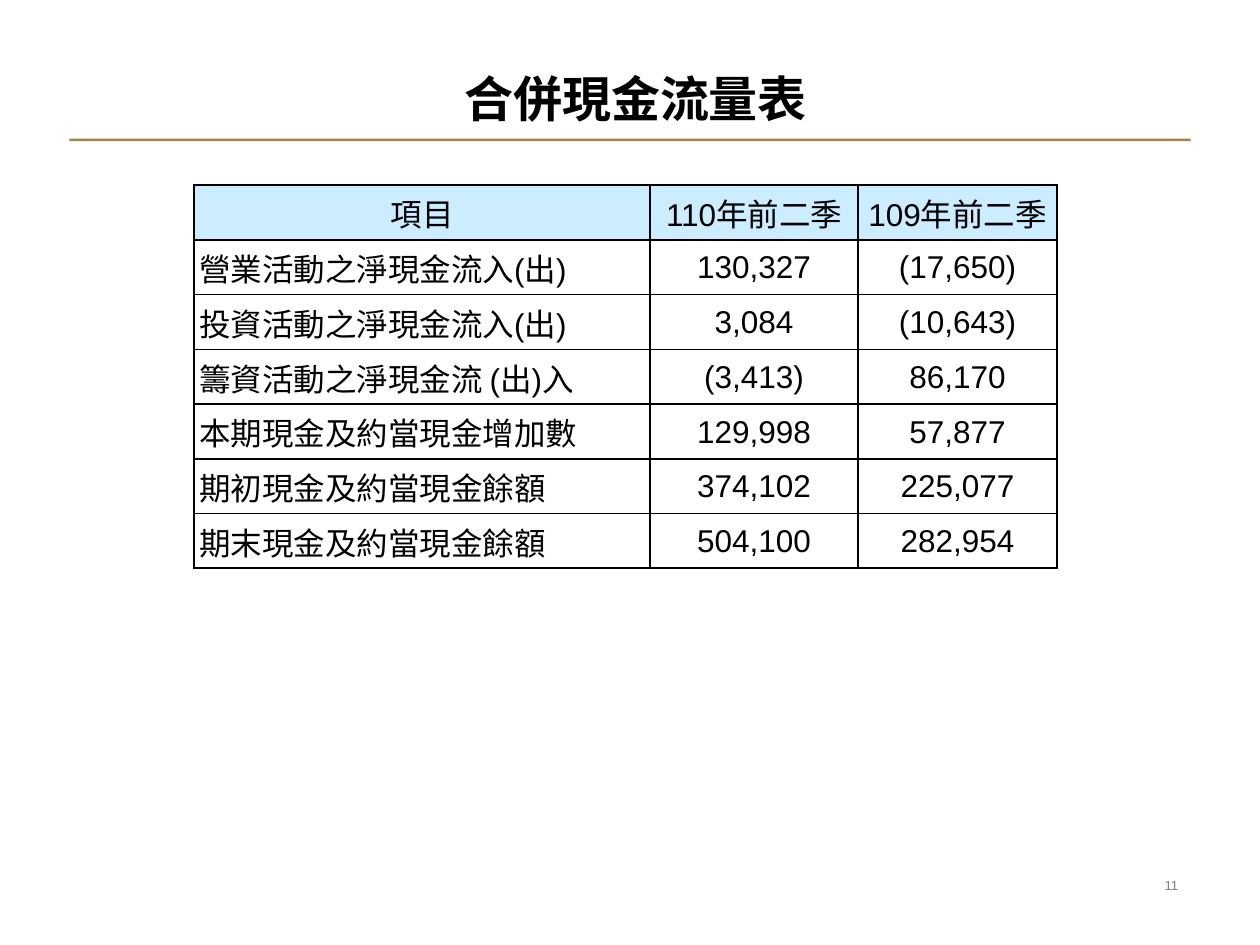
from lxml import etree
from pptx import Presentation
from pptx.dml.color import RGBColor
from pptx.enum.shapes import MSO_SHAPE
from pptx.enum.text import MSO_ANCHOR, PP_ALIGN
from pptx.oxml.ns import qn
from pptx.util import Inches, Pt

LEFT, CENTER, RIGHT = PP_ALIGN.LEFT, PP_ALIGN.CENTER, PP_ALIGN.RIGHT
MIDDLE, BOTTOM = MSO_ANCHOR.MIDDLE, MSO_ANCHOR.BOTTOM
RECTANGLE = MSO_SHAPE.RECTANGLE

CASH_FLOWS = [
    ("項目", "110年前二季", "109年前二季"),
    ("營業活動之淨現金流入(出)", "130,327", "(17,650)"),
    ("投資活動之淨現金流入(出)", "3,084", "(10,643)"),
    ("籌資活動之淨現金流 (出)入", "(3,413)", "86,170"),
    ("本期現金及約當現金增加數", "129,998", "57,877"),
    ("期初現金及約當現金餘額", "374,102", "225,077"),
    ("期末現金及約當現金餘額", "504,100", "282,954"),
]


def rgb(value):
    """Turn a hex string into a colour."""
    return RGBColor.from_string(value)


class Deck:
    """Hold the style and the current slide."""

    font, cjk_font = "Arial", "Noto Sans CJK SC"
    black, white, gold, gray, header = "000000", "FFFFFF", "A78343", "808080", "CCECFF"

    def __init__(self, prs):
        """Start a title-only slide."""
        self.s = prs.slides.add_slide(prs.slide_layouts[5])

    def set_text(self, tf, text, size, color, align, font=None, bold=False):
        """Put one formatted paragraph in a text frame."""
        p = tf.paragraphs[0]
        p.text = text
        p.alignment = align
        p.font.size = Pt(size)
        p.font.bold = bold
        p.font.color.rgb = rgb(color)
        p.font.name = font or self.font
        defaults = p._p.pPr.find(qn("a:defRPr"))
        etree.SubElement(defaults, qn("a:ea"), typeface=self.cjk_font)
        return p

    def title(self, text, left, top, width, height):
        """Place and format the title."""
        sp = self.s.shapes.title
        sp.left, sp.top, sp.width, sp.height = map(Inches, (left, top, width, height))
        tf = sp.text_frame
        tf.vertical_anchor = BOTTOM
        tf.margin_top = tf.margin_bottom = Inches(0.02)
        p = self.set_text(tf, text, 28, self.black, CENTER, self.cjk_font, True)
        p.line_spacing = 0.9

    def rule(self, left, top, width, height):
        """Draw the gold rule under the title."""
        sp = self.s.shapes.add_shape(RECTANGLE, *map(Inches, (left, top, width, height)))
        sp.shadow.inherit = False
        sp.fill.solid()
        sp.fill.fore_color.rgb = rgb(self.gold)
        sp.line.fill.background()

    def page_number(self, text, left, top, width, height):
        """Add the page number."""
        sp = self.s.shapes.add_textbox(*map(Inches, (left, top, width, height)))
        tf = sp.text_frame
        tf.word_wrap = True
        tf.vertical_anchor = MIDDLE
        self.set_text(tf, text, 7.5, self.gray, RIGHT)

    def border(self, cell):
        """Outline a cell with thin black lines."""
        tcPr = cell._tc.get_or_add_tcPr()
        for i, side in enumerate(("lnL", "lnR", "lnT", "lnB")):
            ln = etree.Element(qn(f"a:{side}"), w=str(Pt(1)))
            fill = etree.SubElement(ln, qn("a:solidFill"))
            etree.SubElement(fill, qn("a:srgbClr"), val=self.black)
            tcPr.insert(i, ln)

    def table(self, rows, left, top, col_widths, row_height):
        """Add a bordered table with a tinted header row."""
        frame = self.s.shapes.add_table(
            len(rows), len(col_widths), Inches(left), Inches(top),
            Inches(sum(col_widths)), Inches(row_height * len(rows)))
        table = frame.table
        for column, width in zip(table.columns, col_widths):
            column.width = Inches(width)
        for i, values in enumerate(rows):
            table.rows[i].height = Inches(row_height)
            for j, value in enumerate(values):
                cell = table.cell(i, j)
                cell.vertical_anchor = MIDDLE
                cell.margin_left = cell.margin_right = Inches(0.04)
                cell.margin_top, cell.margin_bottom = Inches(0.01), 0
                cell.fill.solid()
                cell.fill.fore_color.rgb = rgb(self.white if i else self.header)
                align = LEFT if i and not j else CENTER
                self.set_text(cell.text_frame, value, 18, self.black, align)
                self.border(cell)


def main():
    """Build and save the cash flow slide."""
    prs = Presentation()
    prs.slide_width, prs.slide_height = Inches(10), Inches(7.5)
    deck = Deck(prs)
    deck.rule(0.55, 1.1, 8.9, 0.02)
    deck.page_number("11", 8.15, 6.91, 1.3, 0.23)
    deck.table(CASH_FLOWS, 1.54, 1.47, (3.62, 1.65, 1.58), 3.04 / len(CASH_FLOWS))
    deck.title("合併現金流量表", 2.96, 0.57, 4.17, 0.47)
    prs.save("out.pptx")


if __name__ == "__main__":
    main()
